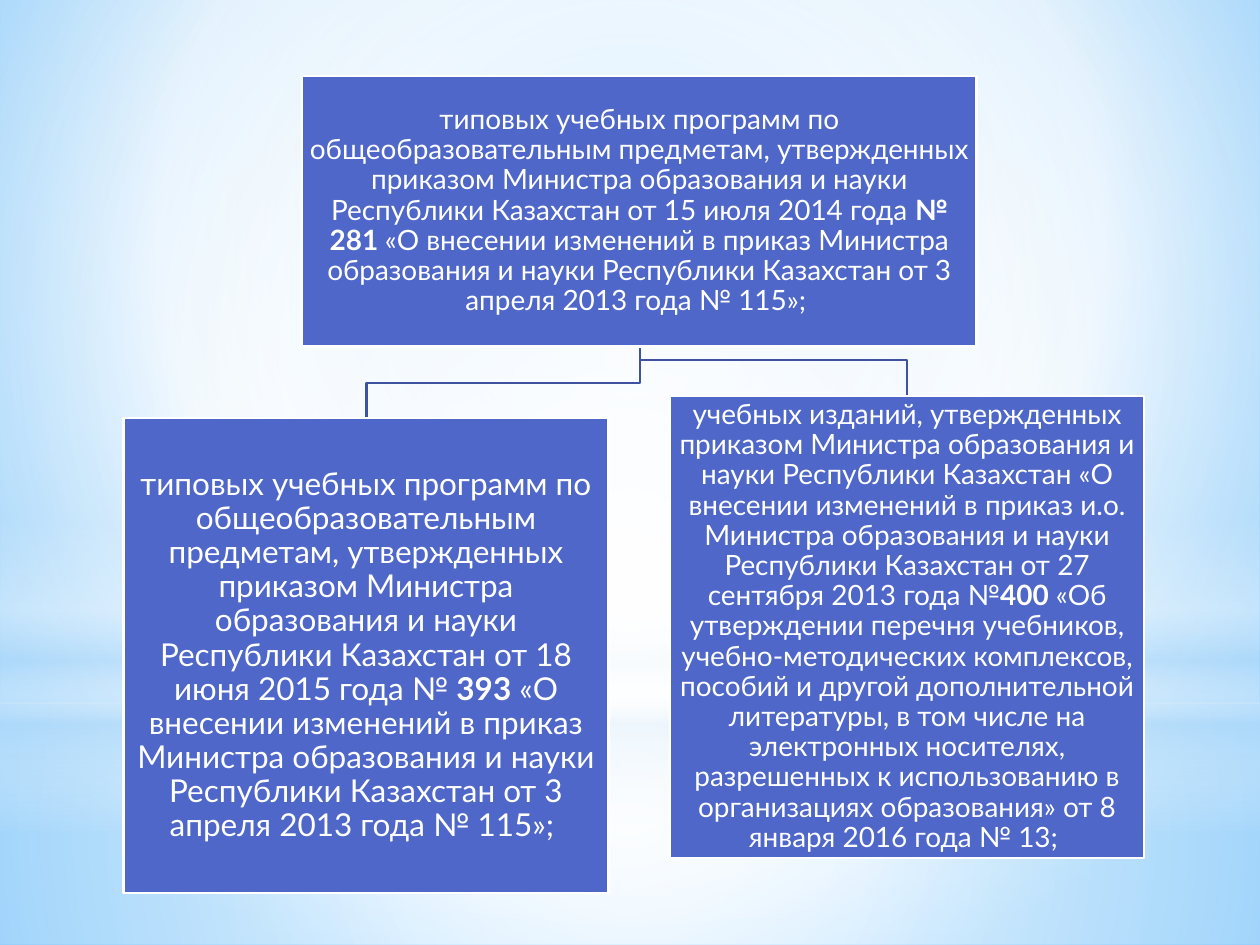
from lxml.etree import SubElement as Sub, Element
from pptx import Presentation
from pptx.dml.color import RGBColor
from pptx.enum.shapes import MSO_SHAPE as Shape
from pptx.enum.text import MSO_ANCHOR as Anchor, PP_ALIGN as Align
from pptx.oxml.ns import qn
from pptx.util import Inches, Pt

WHITE = RGBColor(0xFF, 0xFF, 0xFF)
BLUE = RGBColor(0x4E, 0x67, 0xC8)
NAVY = RGBColor(0x3E, 0x52, 0xA0)
SKY = RGBColor(0xB4, 0xDC, 0xFA)
PALE = RGBColor(0x9E, 0xD5, 0xFF)
DEEP = RGBColor(0x5B, 0xB9, 0xFF)
FONT = "Lato"
CENTRE = (50, 50, 50, 50)

ORDER = "приказом Министра образования и науки Республики Казахстан "
TYPICAL = ("типовых учебных программ по общеобразовательным предметам, "
           "утвержденных " + ORDER)
AMEND = ("«О внесении изменений в приказ Министра образования и науки "
         "Республики Казахстан от 3 апреля 2013 года № 115»; ")
TOP = (TYPICAL + "от 15 июля 2014 года ", "№ 281 ", AMEND)
LEFT = (TYPICAL + "от 18 июня 2015 года № ", "393", " " + AMEND)
RIGHT = ("учебных изданий, утвержденных " + ORDER
         + "«О внесении изменений в приказ и.о. Министра образования и науки "
         "Республики Казахстан от 27 сентября 2013 года №", "400",
         " «Об утверждении перечня учебников, учебно-методических комплексов, "
         "пособий и другой дополнительной литературы, в том числе на "
         "электронных носителях, разрешенных к использованию в организациях "
         "образования» от 8 января 2016 года № 13; ")


def blend(fill, root, stops, focus=None):
    """Give root a gradient of (place, colour, opacity) stops in percent.

    It is radial around focus, or runs from top to bottom without one.
    """
    fill.background()
    old = root.find(".//" + qn("a:noFill"))
    grad = Element(qn("a:gradFill"), rotWithShape="1")
    group = Sub(grad, qn("a:gsLst"))
    for place, color, alpha in stops:
        stop = Sub(group, qn("a:gs"), pos=str(place * 1000))
        tint = Sub(stop, qn("a:srgbClr"), val=str(color))
        if alpha < 100:
            Sub(tint, qn("a:alpha"), val=str(alpha * 1000))
    if focus:
        ring = Sub(grad, qn("a:path"), path="circle")
        sides = {side: str(part * 1000) for side, part in zip("ltrb", focus)}
        Sub(ring, qn("a:fillToRect"), **sides)
    else:
        Sub(grad, qn("a:lin"), ang="5400000", scaled="0")
    old.getparent().replace(old, grad)


def add_form(slide, kind, area):
    form = slide.shapes.add_shape(kind, *map(Inches, area))
    form.shadow.inherit = False
    return form


def add_glow(slide, kind, area, stops, focus=CENTRE):
    glow = add_form(slide, kind, area)
    glow.line.fill.background()
    blend(glow.fill, glow.element.spPr, stops, focus)


def write(shape, text, size=16, color=WHITE, strong=1):
    """Write the runs of text centred, with run number strong in bold."""
    frame = shape.text_frame
    frame.word_wrap = True
    frame.vertical_anchor = Anchor.MIDDLE
    frame.margin_left = frame.margin_right = Inches(0.01)
    frame.margin_top = frame.margin_bottom = Inches(0.01)
    para = frame.paragraphs[0]
    para.alignment = Align.CENTER
    para.line_spacing = 0.9
    para.space_after = Pt(0.35 * size)
    for i, part in enumerate(text):
        run = para.add_run()
        run.text = part
        run.font.name = FONT
        run.font.size = Pt(size)
        run.font.bold = i == strong
        run.font.color.rgb = color


def add_box(slide, area, text, size=16):
    box = add_form(slide, Shape.RECTANGLE, area)
    box.fill.solid()
    box.fill.fore_color.rgb = BLUE
    box.line.color.rgb = WHITE
    box.line.width = Pt(1.25)
    write(box, text, size=size)


def add_branch(slide, start, bend, end):
    """Draw a stepped line that turns sideways at height bend."""
    pen = slide.shapes.build_freeform(*map(Inches, start))
    steps = [(start[0], bend), (end[0], bend), end]
    pen.add_line_segments([tuple(map(Inches, p)) for p in steps], close=False)
    line = pen.convert_to_shape()
    line.shadow.inherit = False
    line.fill.background()
    line.line.color.rgb = NAVY
    line.line.width = Pt(1.25)


def add_scene(slide):
    blend(slide.background.fill, slide.element,
          [(0, PALE, 100), (60, WHITE, 100), (100, DEEP, 100)],
          (20, 10, 20, 60))
    add_glow(slide, Shape.RECTANGLE, (0, 5.58, 10, 1.92),
             [(0, WHITE, 91), (37, WHITE, 76), (100, SKY, 79)])
    add_glow(slide, Shape.RECTANGLE, (0, 0, 10, 5.58),
             [(0, WHITE, 89), (48, WHITE, 62), (100, SKY, 79)])
    add_glow(slide, Shape.RECTANGLE, (0, 4.12, 10, 2.5),
             [(0, WHITE, 0), (29, WHITE, 30), (45, SKY, 40),
              (55, WHITE, 26), (65, SKY, 60), (100, WHITE, 0)], None)
    add_glow(slide, Shape.OVAL, (0, 1.75, 10, 5.58),
             [(0, WHITE, 100), (56, WHITE, 0)])


def main():
    deck = Presentation()
    deck.slide_width, deck.slide_height = Inches(10), Inches(7.5)
    slide = deck.slides.add_slide(deck.slide_layouts[6])
    add_scene(slide)
    root = (5.08, 2.75)
    add_branch(slide, root, 2.86, (7.2, 3.14))
    add_branch(slide, root, 3.04, (2.91, 3.32))
    add_box(slide, (2.4, 0.6, 5.35, 2.15), TOP)
    add_box(slide, (0.98, 3.32, 3.85, 3.77), LEFT, size=18)
    add_box(slide, (5.32, 3.14, 3.76, 3.67), RIGHT)
    deck.save("out.pptx")


if __name__ == "__main__":
    main()
